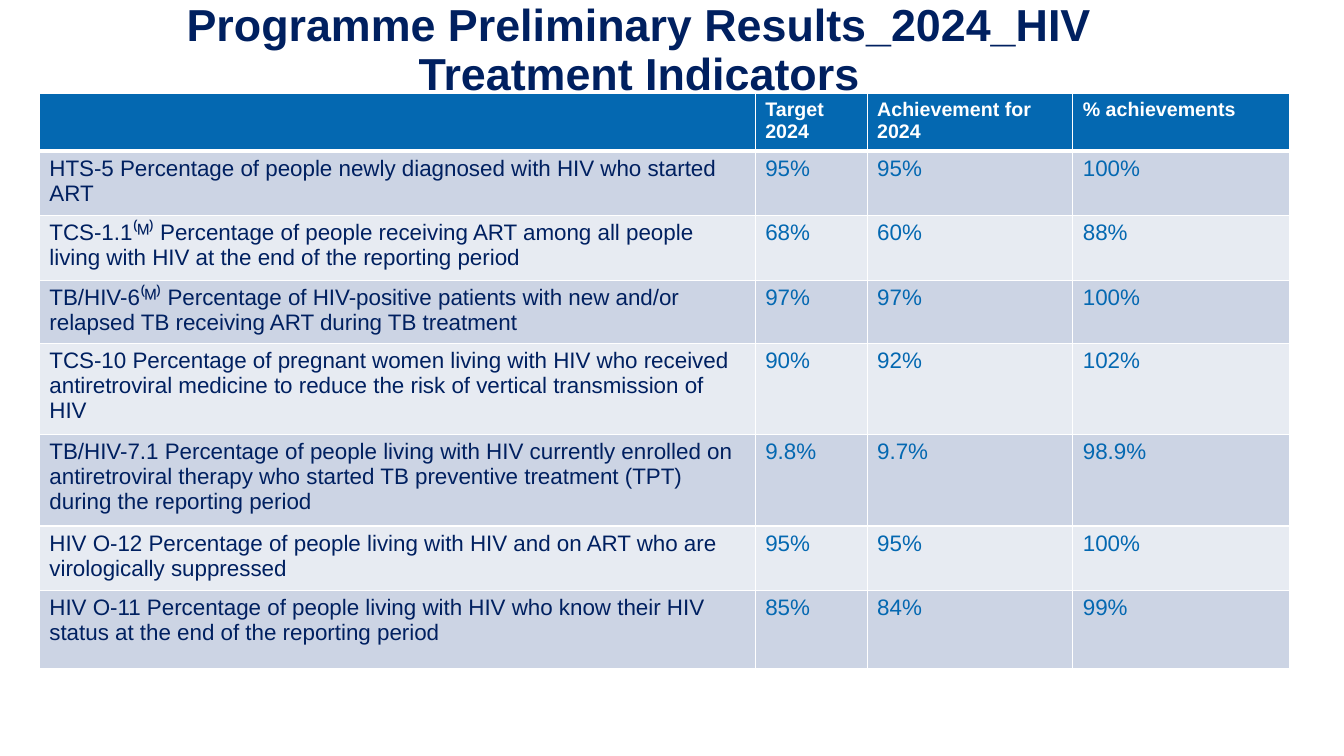
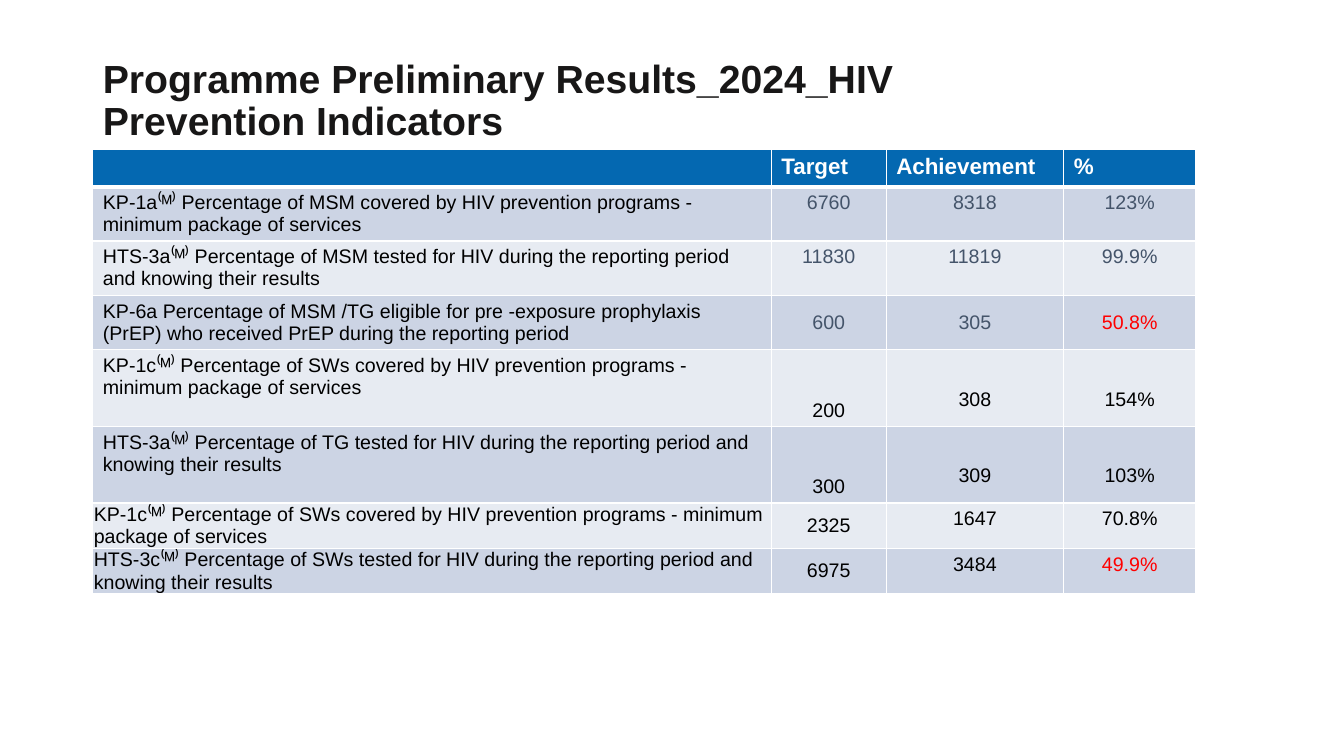
from dataclasses import dataclass

import lxml.etree
import pptx
import pptx.dml.color
import pptx.enum.text
import pptx.oxml.ns
import pptx.util

Inches = pptx.util.Inches
Pt = pptx.util.Pt
ALIGN = pptx.enum.text.PP_ALIGN
ANCHOR = pptx.enum.text.MSO_ANCHOR
qn = pptx.oxml.ns.qn


@dataclass(frozen=True)
class Theme:
    font: str = "Arial"
    white: str = "FFFFFF"
    black: str = "000000"
    navy: str = "002060"
    ink: str = "181717"
    blue: str = "0468B1"
    slate: str = "44546A"
    red: str = "FF0000"
    bands: tuple = ("CCD4E4", "E7EBF2")
    rule: float = 1
    header_rule: float = 3
    low_score: float = 60


T = Theme()

# (anchor, (left, top, right, bottom))
TOP = (ANCHOR.TOP, (0.1, 0.05, 0.1, 0.05))
BOTTOM = (ANCHOR.BOTTOM, (0.1, 0.05, 0.1, 0.05))
TIGHT = (ANCHOR.TOP, (0.01, 0.01, 0.01, 0))
MIDDLE = (ANCHOR.MIDDLE, (0, 0, 0, 0))
SUNK = (ANCHOR.MIDDLE, (0, 0.22, 0, 0))

ALL_TOP = (TOP,) * 4
MIDDLE_VALUES = (TOP, MIDDLE, MIDDLE, MIDDLE)
SUNK_VALUES = (TOP, BOTTOM, SUNK, SUNK)
TIGHT_LABEL = (TIGHT, MIDDLE, TOP, TOP)

TREATMENT = {
    "title": ("Programme Preliminary Results_2024_HIV", "Treatment Indicators"),
    "title_box": (0.79, 0.23, 11.1, 0.81),
    "title_look": (32, T.navy, ALIGN.CENTER),
    "at": (0.39, 0.93),
    "cols": (7.1, 1.11, 2.04, 2.15),
    "sizes": (14, 16),
    "label_color": T.navy,
    "value_align": ALIGN.LEFT,
    "header": ("", "Target 2024", "Achievement for 2024", "% achievements"),
    "header_height": 0.57,
    "rows": [
        (("HTS-5 Percentage of people newly diagnosed with HIV who started ART",
          "95%", "95%", "100%"), 0.64, T.blue, ALL_TOP),
        (("TCS-1.1⁽ᴹ⁾ Percentage of people receiving ART among all people living with HIV "
          "at the end of the reporting period",
          "68%", "60%", "88%"), 0.64, T.blue, ALL_TOP),
        (("TB/HIV-6⁽ᴹ⁾ Percentage of HIV-positive patients with new and/or relapsed TB "
          "receiving ART during TB treatment",
          "97%", "97%", "100%"), 0.63, T.blue, ALL_TOP),
        (("TCS-10 Percentage of pregnant women living with HIV who received antiretroviral "
          "medicine to reduce the risk of vertical transmission of HIV",
          "90%", "92%", "102%"), 0.9, T.blue, ALL_TOP),
        (("TB/HIV-7.1 Percentage of people living with HIV currently enrolled on antiretroviral "
          "therapy who started TB preventive treatment (TPT) during the reporting period",
          "9.8%", "9.7%", "98.9%"), 0.91, T.blue, ALL_TOP),
        (("HIV O-12 Percentage of people living with HIV and on ART who are virologically "
          "suppressed",
          "95%", "95%", "100%"), 0.64, T.blue, ALL_TOP),
        (("HIV O-11 Percentage of people living with HIV who know their HIV status at the end "
          "of the reporting period",
          "85%", "84%", "99%"), 0.77, T.blue, ALL_TOP),
    ],
}

PREVENTION = {
    "title": ("Programme Preliminary Results_2024_HIV", "Prevention Indicators"),
    "title_box": (0.92, 0.4, 11.5, 1.08),
    "title_look": (28, T.ink, ALIGN.LEFT),
    "at": (0.92, 1.48),
    "cols": (6.73, 1.14, 1.76, 1.31),
    "sizes": (16, 14),
    "label_color": T.black,
    "value_align": ALIGN.CENTER,
    "header": ("", "Target", "Achievement", "%"),
    "header_height": 0.37,
    "rows": [
        (("KP-1a⁽ᴹ⁾ Percentage of MSM covered by HIV prevention programs - minimum package "
          "of services",
          "6760", "8318", "123%"), 0.54, T.slate, ALL_TOP),
        (("HTS-3a⁽ᴹ⁾ Percentage of MSM tested for HIV during the reporting period and knowing "
          "their results",
          "11830", "11819", "99.9%"), 0.54, T.slate, ALL_TOP),
        (("KP-6a Percentage of MSM /TG eligible for pre -exposure prophylaxis (PrEP) who "
          "received PrEP during the reporting period",
          "600", "305", "50.8%"), 0.54, T.slate, MIDDLE_VALUES),
        (("KP-1c⁽ᴹ⁾ Percentage of SWs covered by HIV prevention programs - minimum package "
          "of services",
          "200", "308", "154%"), 0.76, T.black, SUNK_VALUES),
        (("HTS-3a⁽ᴹ⁾ Percentage of TG tested for HIV during the reporting period and knowing "
          "their results",
          "300", "309", "103%"), 0.76, T.black, SUNK_VALUES),
        (("KP-1c⁽ᴹ⁾ Percentage of SWs covered by HIV prevention programs - minimum package "
          "of services",
          "2325", "1647", "70.8%"), 0.44, T.black, TIGHT_LABEL),
        (("HTS-3c⁽ᴹ⁾ Percentage of SWs tested for HIV during the reporting period and knowing "
          "their results",
          "6975", "3484", "49.9%"), 0.44, T.black, TIGHT_LABEL),
    ],
}


def rgb(color):
    return pptx.dml.color.RGBColor.from_string(color)


def add_run(p, text, size, color, bold=False):
    r = p.add_run()
    r.text = text
    r.font.name = T.font
    r.font.size = Pt(size)
    r.font.bold = bold
    r.font.color.rgb = rgb(color)


def add_title(s, data):
    title = s.shapes.title
    title.left, title.top, title.width, title.height = map(Inches, data["title_box"])
    size, color, align = data["title_look"]
    tf = title.text_frame
    tf.word_wrap = True
    tf.auto_size = pptx.enum.text.MSO_AUTO_SIZE.NONE
    tf.vertical_anchor = ANCHOR.BOTTOM
    p = tf.paragraphs[0]
    p.alignment = align
    p.line_spacing = 0.9
    for i, line in enumerate(data["title"]):
        if i:
            p.add_line_break()
        add_run(p, line, size, color, True)


def set_borders(cell, top, bottom):
    tcPr = cell._tc.get_or_add_tcPr()
    for side, width in (("L", T.rule), ("R", T.rule), ("T", top), ("B", bottom)):
        ln = lxml.etree.SubElement(tcPr, qn("a:ln" + side), w=str(Pt(width)))
        fill = lxml.etree.SubElement(ln, qn("a:solidFill"))
        lxml.etree.SubElement(fill, qn("a:srgbClr"), val=T.white)


def fill_cell(cell, text, size, color, fill, align=ALIGN.LEFT, place=TOP, bold=False):
    cell.fill.solid()
    cell.fill.fore_color.rgb = rgb(fill)
    cell.vertical_anchor, insets = place
    (cell.margin_left, cell.margin_top,
     cell.margin_right, cell.margin_bottom) = map(Inches, insets)
    p = cell.text_frame.paragraphs[0]
    p.alignment = align
    if text:
        add_run(p, text, size, color, bold)
    else:
        lxml.etree.SubElement(p._p, qn("a:endParaRPr"), sz=str(size * 100))


def add_indicators(s, data):
    heights = [data["header_height"]] + [row[1] for row in data["rows"]]
    cols = data["cols"]
    box = map(Inches, (*data["at"], sum(cols), sum(heights)))
    table = s.shapes.add_table(len(heights), len(cols), *box).table
    for column, width in zip(table.columns, cols):
        column.width = Inches(width)
    for i, height in enumerate(heights):
        table.rows[i].height = Inches(height)
        for cell in table.rows[i].cells:
            set_borders(cell, T.header_rule if i == 1 else T.rule,
                        T.header_rule if i == 0 else T.rule)

    header_size, body_size = data["sizes"]
    for j, text in enumerate(data["header"]):
        fill_cell(table.cell(0, j), text, header_size, T.white, T.blue, bold=True)
    for i, (texts, _, value_color, places) in enumerate(data["rows"]):
        is_low = float(texts[-1].rstrip("%")) < T.low_score
        colors = [data["label_color"], value_color, value_color,
                  T.red if is_low else value_color]
        aligns = [ALIGN.LEFT] + [data["value_align"]] * 3
        for j, (text, color, align, place) in enumerate(zip(texts, colors, aligns, places)):
            fill_cell(table.cell(i + 1, j), text, body_size, color, T.bands[i % 2], align, place)


def main():
    prs = pptx.Presentation()
    prs.slide_width, prs.slide_height = Inches(13.33), Inches(7.5)
    for data in (TREATMENT, PREVENTION):
        s = prs.slides.add_slide(prs.slide_layouts[5])
        add_title(s, data)
        add_indicators(s, data)
    prs.save("out.pptx")


if __name__ == "__main__":
    main()
